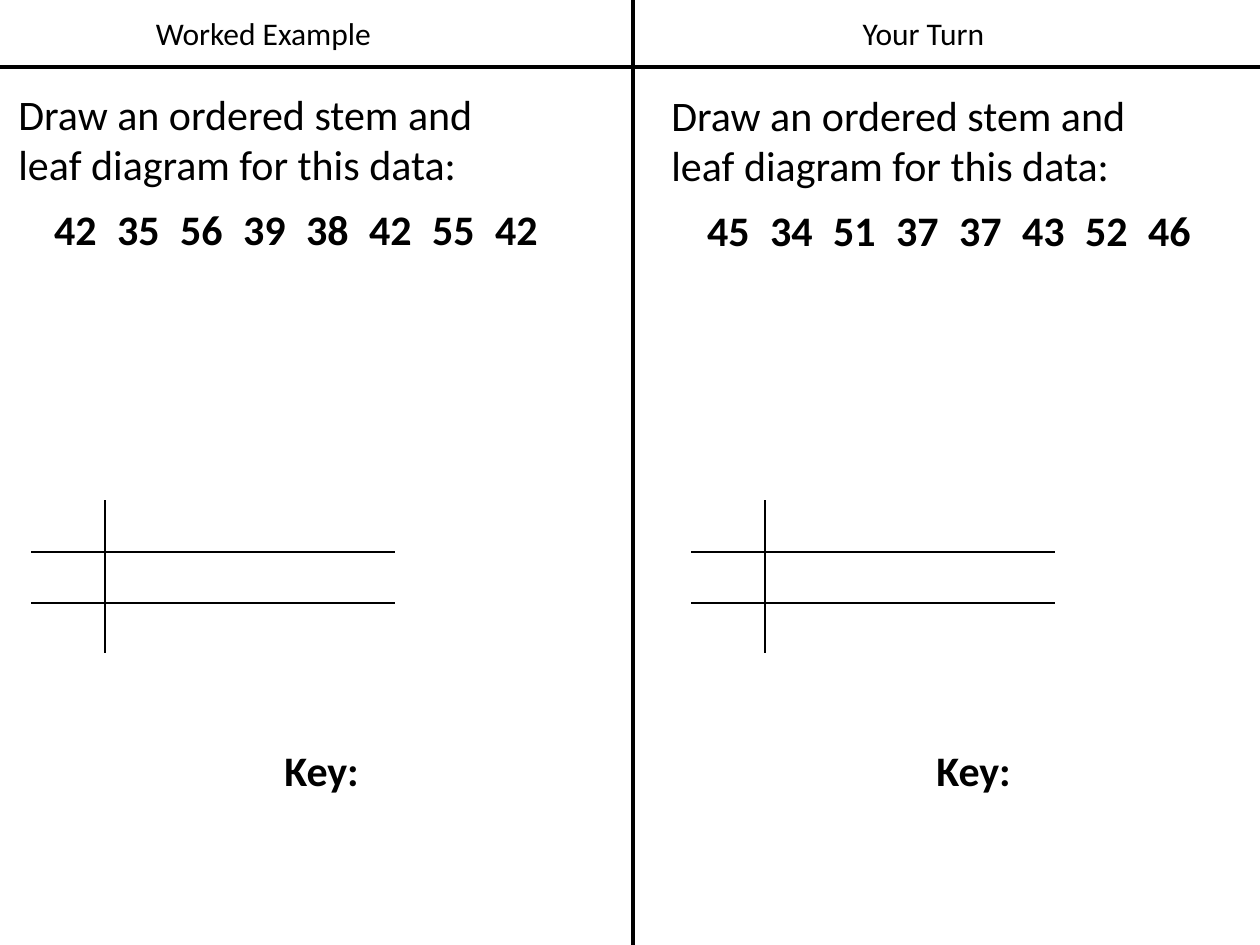
from lxml.etree import SubElement
from pptx import Presentation
from pptx.dml.color import RGBColor
from pptx.enum.shapes import MSO_CONNECTOR
from pptx.enum.text import MSO_AUTO_SIZE, PP_ALIGN
from pptx.oxml import parse_xml
from pptx.oxml.ns import nsdecls, qn
from pptx.util import Emu, Pt

PIXEL = 914400 // 126
WIDTH, HEIGHT = 1260, 945
BLACK = "000000"
FONT = "Calibri"
TAB_STEP = 63
COLUMNS = (73, 289)
ROW_HEIGHT = 51
ROW_COUNT = 3
QUESTION = "Draw an ordered stem and leaf diagram for this data:"


def px(length):
    return Emu(round(length * PIXEL))


def color(value):
    return RGBColor.from_string(value)


def add_text(page, text, left, top, width, height, size=24, bold=False, align=PP_ALIGN.LEFT):
    box = page.shapes.add_textbox(px(left), px(top), px(width), px(height))
    frame = box.text_frame
    frame.word_wrap = True
    frame.auto_size = MSO_AUTO_SIZE.SHAPE_TO_FIT_TEXT
    para = frame.paragraphs[0]
    para.text = text
    para.alignment = align
    para.font.name = FONT
    para.font.size = Pt(size)
    para.font.bold = bold
    para.font.color.rgb = color(BLACK)
    return para


def add_data(page, values, left, top):
    text = "\t".join(str(value) for value in values)
    para = add_text(page, text, left, top, 530, 63, bold=True, align=PP_ALIGN.CENTER)
    tabs = parse_xml(f"<a:tabLst {nsdecls('a')}/>")
    for stop in range(1, len(values)):
        SubElement(tabs, qn("a:tab"), pos=str(px(stop * TAB_STEP)), algn="l")
    para._p.get_or_add_pPr().insert(0, tabs)


def add_rule(page, start_x, start_y, end_x, end_y):
    rule = page.shapes.add_connector(
        MSO_CONNECTOR.STRAIGHT, px(start_x), px(start_y), px(end_x), px(end_y)
    )
    rule.line.color.rgb = color(BLACK)
    rule.line.width = Pt(2.5)
    SubElement(rule._element.spPr, qn("a:effectLst"))


def set_borders(cell, sides):
    properties = cell._tc.get_or_add_tcPr()
    for index, side in enumerate(sides):
        border = parse_xml(
            f'<a:ln{side} {nsdecls("a")} w="{Pt(1)}"><a:solidFill>'
            f'<a:srgbClr val="{BLACK}"/></a:solidFill></a:ln{side}>'
        )
        properties.insert(index, border)


def add_stem_table(page, left, top):
    table = page.shapes.add_table(
        ROW_COUNT, len(COLUMNS), px(left), px(top), px(sum(COLUMNS)), px(ROW_COUNT * ROW_HEIGHT)
    ).table
    table.first_row = False
    table.horz_banding = False
    for column, width in zip(table.columns, COLUMNS):
        column.width = px(width)
    for row_index, row in enumerate(table.rows):
        row.height = px(ROW_HEIGHT)
        for column_index, cell in enumerate(row.cells):
            cell.fill.background()
            sides = "R" if column_index == 0 else "L"
            if row_index > 0:
                sides += "T"
            if row_index < ROW_COUNT - 1:
                sides += "B"
            set_borders(cell, sides)


def add_exercise(page, title, title_left, left, top, values, table_left, key_left):
    add_text(page, title, title_left, 8, 243, 50, size=18, align=PP_ALIGN.CENTER)
    add_text(page, QUESTION, left, top, 530, 115)
    add_data(page, values, left + 25, top + 115)
    add_stem_table(page, table_left, 501)
    add_text(page, "Key:", key_left, 738, 338, 63, bold=True)


def main():
    deck = Presentation()
    deck.slide_width = px(WIDTH)
    deck.slide_height = px(HEIGHT)
    page = deck.slides.add_slide(deck.slide_layouts[6])
    add_rule(page, 633, 0, 633, HEIGHT)
    add_rule(page, 0, 67, WIDTH, 67)
    add_exercise(page, "Worked Example", 142, 6, 82, (42, 35, 56, 39, 38, 42, 55, 42), 32, 272)
    add_exercise(page, "Your Turn", 802, 659, 83, (45, 34, 51, 37, 37, 43, 52, 46), 692, 924)
    deck.save("out.pptx")


if __name__ == "__main__":
    main()
